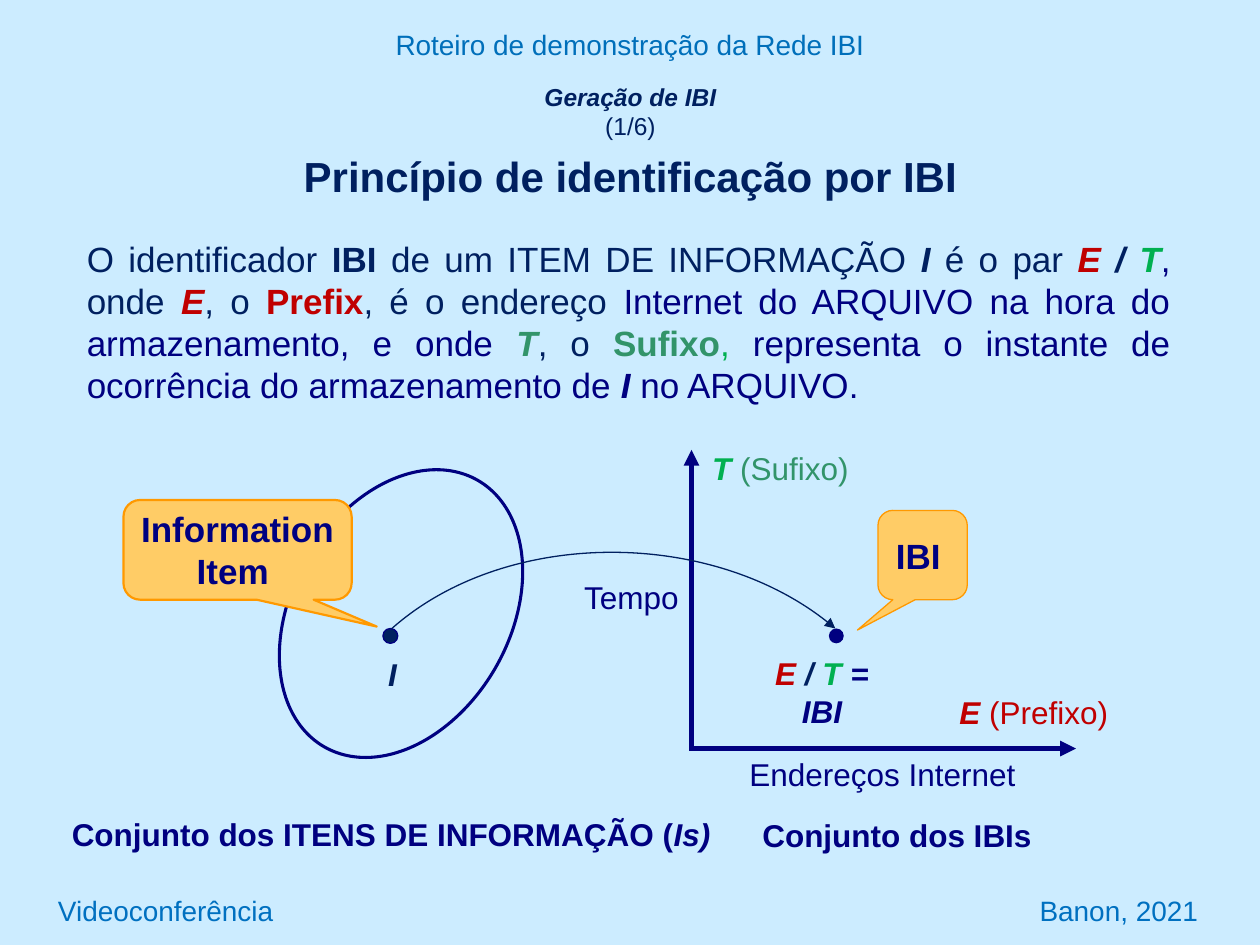
from dataclasses import dataclass
from lxml import etree
from pptx import Presentation, util as u
from pptx.dml.color import RGBColor
from pptx.enum import shapes as es, text as et
from pptx.oxml.ns import qn

NAVY, DEEP, RED = "000080", "002060", "C00000"
GREEN, MOSS, BLUE = "00B050", "32946A", "0070C0"
LEFT, MID, RIGHT, FULL = (et.PP_ALIGN.LEFT, et.PP_ALIGN.CENTER,
                          et.PP_ALIGN.RIGHT, et.PP_ALIGN.JUSTIFY)


@dataclass(frozen=True)
class Run:
    text: str
    color: str = NAVY
    bold: bool = False
    slant: bool = False
    size: float = 0


@dataclass(frozen=True)
class Label:
    box: tuple
    lines: list
    size: float = 18
    align: int = MID
    wrap: bool = False


@dataclass(frozen=True)
class Callout:
    box: tuple
    tip: tuple
    lines: list
    width: float


@dataclass(frozen=True)
class Oval:
    box: tuple
    fill: str = ""
    line: str = ""
    width: float = 0.75
    turn: float = 0


def cms(vals) -> list:
    return [u.Cm(v) for v in vals]


def paint(part, color: str) -> None:
    part.solid()
    part.fore_color.rgb = RGBColor.from_string(color)


def style(shape, fill: str = "", line: str = "", width: float = 0.75) -> None:
    shape.shadow.inherit = False
    for part, color in ((shape.fill, fill), (shape.line.fill, line)):
        if color:
            paint(part, color)
        else:
            part.background()
    if line:
        shape.line.width = u.Pt(width)


def write(shape, lines, *, size=18, align=MID, wrap=True,
          anchor=et.MSO_ANCHOR.TOP, gap=0) -> None:
    frame = shape.text_frame
    frame.word_wrap = wrap
    frame.vertical_anchor = anchor
    for num, runs in enumerate(lines):
        para = frame.add_paragraph() if num else frame.paragraphs[0]
        para.alignment = align
        for run in runs:
            bit = para.add_run()
            bit.text = run.text
            font = bit.font
            font.name, font.size = "Arial", u.Pt(run.size or size)
            font.bold, font.italic = run.bold, run.slant
            paint(font.fill, run.color)
    if gap:
        frame.paragraphs[-1].space_before = u.Pt(gap)


def draw_label(slide, item: Label, gap: float = 0) -> None:
    box = slide.shapes.add_textbox(*cms(item.box))
    write(box, item.lines, size=item.size, align=item.align,
          wrap=item.wrap, gap=gap)


def draw_call(slide, item: Callout) -> None:
    shape = slide.shapes.add_shape(
        es.MSO_SHAPE.ROUNDED_RECTANGULAR_CALLOUT, *cms(item.box))
    for num, val in enumerate((*item.tip, 0.167)):
        shape.adjustments[num] = val
    style(shape, "FFCC66", "FF9900", item.width)
    write(shape, item.lines, size=20, anchor=et.MSO_ANCHOR.MIDDLE)


def draw_oval(slide, item: Oval) -> None:
    shape = slide.shapes.add_shape(es.MSO_SHAPE.OVAL, *cms(item.box))
    shape.rotation = item.turn
    style(shape, item.fill, item.line, item.width)


def add_head(shape) -> None:
    tail = etree.SubElement(shape.line._get_or_add_ln(), qn("a:tailEnd"))
    tail.set("type", "triangle")


def draw_axis(slide, ends: tuple) -> None:
    axis = slide.shapes.add_connector(es.MSO_CONNECTOR.STRAIGHT, *cms(ends))
    paint(axis.line.fill, NAVY)
    axis.line.width = u.Pt(3)
    add_head(axis)
    etree.SubElement(axis._element.spPr, qn("a:effectLst"))


def draw_curve(slide, start, left, right, end) -> None:
    peak = ((start[0] + end[0]) / 2, start[1] / 4 + left[1] * 3 / 4)
    build = slide.shapes.build_freeform(*cms(start))
    build.add_line_segments([cms(peak), cms(end)], close=False)
    curve = build.convert_to_shape()
    style(curve, line=DEEP)
    add_head(curve)
    route = curve._element.find(".//" + qn("a:path"))
    for leg in route.findall(qn("a:lnTo")):
        route.remove(leg)
    bend = etree.SubElement(route, qn("a:cubicBezTo"))
    for x, y in (left, right, end):
        point = etree.SubElement(bend, qn("a:pt"))
        point.set("x", str(u.Cm(x) - curve.left))
        point.set("y", str(u.Cm(y) - curve.top))


def strong(text: str, color: str = NAVY) -> Run:
    return Run(text, color, True, True)


BODY = Label((1.5, 4.67, 22.35, 3.66), [[
    Run("O identificador ", DEEP), Run("IBI", DEEP, True),
    Run(" de um ITEM DE INFORMAÇÃO ", DEEP), strong("I", DEEP),
    Run(" é o par ", DEEP), strong("E ", RED), strong("/ ", DEEP),
    strong("T", GREEN), Run(", "), Run("onde ", DEEP), strong("E", RED),
    Run(", o ", DEEP), Run("Prefix", RED, True),
    Run(", é o endereço", DEEP),
    Run(" Internet do ARQUIVO na hora do armazenamento, e onde "),
    strong("T", MOSS), Run(", o ", DEEP), Run("Sufixo", MOSS, True),
    Run(", ", GREEN),
    Run("representa o instante de ocorrência do armazenamento de "),
    strong("I"), Run(" no ARQUIVO.")]], 20, FULL, True)

TITLE = Label((1.9, 1.52, 21.62, 2.49), [
    [Run("Geração de IBI", DEEP, True, True, 14)],
    [Run("(1/6)", DEEP, size=14)],
    [Run("Princípio de identificação por IBI", DEEP, True)]], 24, wrap=True)

AXES = [(13.89, 15.09, 21.69, 15.09), (13.94, 15.09, 13.94, 9.07)]
OVALS = [Oval((16.71, 12.67, 0.3, 0.3), NAVY),
         Oval((5.89, 9.27, 4.39, 6.2), line=NAVY, width=1.75, turn=30),
         Oval((7.72, 12.67, 0.3, 0.3), DEEP, NAVY)]
CALLS = [
    Callout((17.7, 10.29, 1.8, 1.8), (-0.73, 0.84),
            [[Run("IBI", bold=True), Run(" ", bold=True, size=18)]], 0.75),
    Callout((2.49, 10.08, 4.6, 2.01), (0.61, 0.77),
            [[Run("Information", bold=True)], [Run("Item ", bold=True)]], 1.25)]
LABELS = [
    Label((14.83, 15.09, 5.92, 1.02), [[Run("Endereços Internet")]]),
    Label((1.04, 16.31, 13.69, 1.02),
          [[Run("Conjunto dos ITENS DE INFORMAÇÃO (", bold=True),
            strong("Is)")]]),
    Label((15.0, 16.33, 6.17, 1.02), [[Run("Conjunto dos IBIs", bold=True)]]),
    Label((7.57, 13.08, 0.69, 1.02), [[strong("I", DEEP)]]),
    Label((15.06, 13.06, 3.02, 1.78),
          [[strong("E", RED), strong(" / ", DEEP), strong("T ", GREEN),
            strong("=")], [strong("IBI")]]),
    Label((13.98, 8.92, 3.51, 1.02),
          [[strong("T ", GREEN), Run("(Sufixo)", MOSS)]], wrap=True),
    Label((19.05, 13.84, 3.58, 1.02),
          [[strong("E ", RED), Run("(Prefixo)", RED)]], wrap=True),
    Label((11.51, 11.53, 2.44, 1.02), [[Run("Tempo")]]),
    Label((0, 0.43, 25.4, 0.94),
          [[Run("Roteiro de demonstração da Rede IBI", "006FBA")]],
          16, wrap=True),
    Label((0.92, 17.88, 8, 0.94), [[Run("Videoconferência", BLUE)]],
          16, LEFT, True),
    Label((16.4, 17.88, 8, 0.94), [[Run("Banon, 2021", BLUE)]],
          16, RIGHT, True)]


def main() -> None:
    deck = Presentation()
    deck.slide_width, deck.slide_height = cms((25.4, 19.05))
    slide = deck.slides.add_slide(deck.slide_layouts[6])
    paint(slide.background.fill, "CCECFF")
    draw_label(slide, BODY)
    for ends in AXES:
        draw_axis(slide, ends)
    for item in OVALS:
        draw_oval(slide, item)
    draw_curve(slide, (7.9, 12.67), (10.19, 10.64),
               (14.48, 10.64), (16.84, 12.67))
    for item in CALLS:
        draw_call(slide, item)
    draw_label(slide, TITLE, gap=6)
    for item in LABELS:
        draw_label(slide, item)
    deck.save("out.pptx")


if __name__ == "__main__":
    main()
